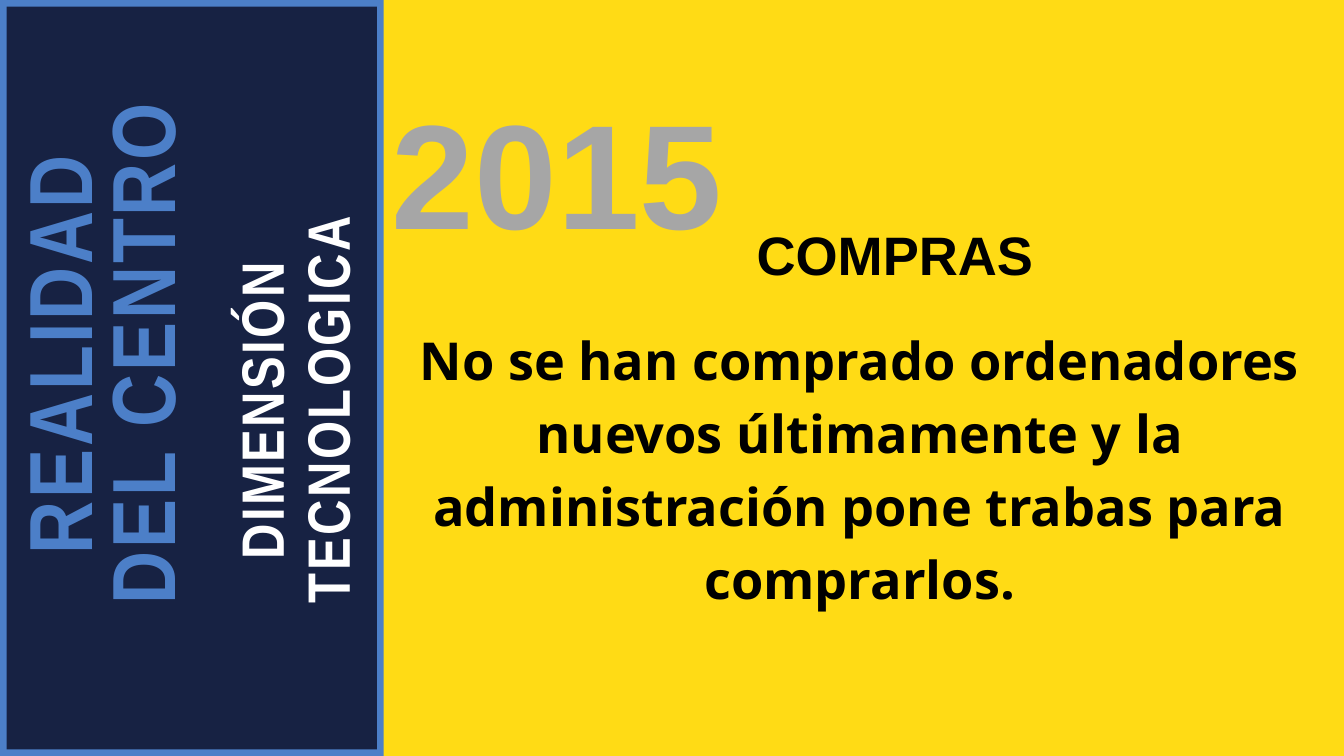
import pptx
import pptx.util
import pptx.dml.color
import pptx.enum.shapes
import pptx.enum.text

Cm, Pt = pptx.util.Cm, pptx.util.Pt
ALIGN = pptx.enum.text.PP_ALIGN

COLORS = {"back": "FFDB15", "blue": "4C7FC8", "navy": "172243",
          "white": "FFFFFF", "gray": "A6A6A6", "black": "000000"}
WIDTH, HEIGHT = 50.8, 28.58
SIDE, EDGE = 14.5, 0.25

# Boxes are left, top, width, height in cm
TITLE = {"text": "COMPRAS", "box": (28.6, 8.08, 21.87, 2.76), "line": 78.3,
         "size": 58, "font": "Arial", "color": "black", "align": ALIGN.LEFT}
TEXTS = [
    {"text": "REALIDAD DEL CENTRO", "box": (-5.94, 9.86, 21.01, 7.01),
     "line": 88.4, "size": 96.1, "font": "Arial Narrow", "color": "blue",
     "align": ALIGN.CENTER, "turn": 270, "gap": 2.9},
    {"text": "DIMENSIÓN TECNOLOGICA", "box": (2.97, 12.85, 16.74, 5.28),
     "line": 70.5, "size": 64.1, "font": "Arial Narrow", "color": "white",
     "align": ALIGN.CENTER, "turn": 270, "gap": 2.6},
    {"text": "2015", "box": (SIDE, 4.17, 12.8, 6.15),
     "line": 159.1, "size": 159.1, "font": "Arial", "color": "gray",
     "align": ALIGN.RIGHT},
    {"text": "No se han comprado ordenadores nuevos últimamente y la "
             "administración pone trabas para comprarlos.",
     "box": (SIDE, 12.01, 36, 11), "line": 78.4, "size": 56,
     "font": "Open Sans", "color": "black", "align": ALIGN.CENTER},
]


def paint(fill, name):
    fill.solid()
    fill.fore_color.rgb = pptx.dml.color.RGBColor.from_string(COLORS[name])


def put(item, values):
    for name, value in values.items():
        setattr(item, name, value)


def panel(slide, inset, name):
    shape = slide.shapes.add_shape(
        pptx.enum.shapes.MSO_SHAPE.RECTANGLE, Cm(inset), Cm(inset),
        Cm(SIDE - 2 * inset), Cm(HEIGHT - 2 * inset))
    shape.shadow.inherit = False
    shape.line.fill.background()
    paint(shape.fill, name)


def write(shape, item):
    left, top, width, height = map(Cm, item["box"])
    put(shape, {"left": left, "top": top, "width": width, "height": height,
                "rotation": item.get("turn", 0)})
    frame = shape.text_frame
    put(frame, {"text": item["text"], "word_wrap": True,
                "margin_left": 0, "margin_top": 0,
                "margin_right": 0, "margin_bottom": 0,
                "vertical_anchor": pptx.enum.text.MSO_ANCHOR.TOP,
                "auto_size": pptx.enum.text.MSO_AUTO_SIZE.SHAPE_TO_FIT_TEXT})
    para = frame.paragraphs[0]
    put(para, {"alignment": item["align"], "line_spacing": Pt(item["line"]),
               "space_before": Pt(0)})
    run = para.runs[0]
    put(run.font, {"name": item["font"], "size": Pt(item["size"]),
                   "bold": True})
    paint(run.font.fill, item["color"])
    if "gap" in item:
        run._r.get_or_add_rPr().set("spc", str(round(item["gap"] * 100)))


def main():
    deck = pptx.Presentation()
    put(deck, {"slide_width": Cm(WIDTH), "slide_height": Cm(HEIGHT)})
    slide = deck.slides.add_slide(deck.slide_layouts[5])
    paint(slide.background.fill, "back")
    panel(slide, 0, "blue")
    panel(slide, EDGE, "navy")
    write(slide.shapes.title, TITLE)
    for item in TEXTS:
        write(slide.shapes.add_textbox(0, 0, 0, 0), item)
    deck.save("out.pptx")


if __name__ == "__main__":
    main()
